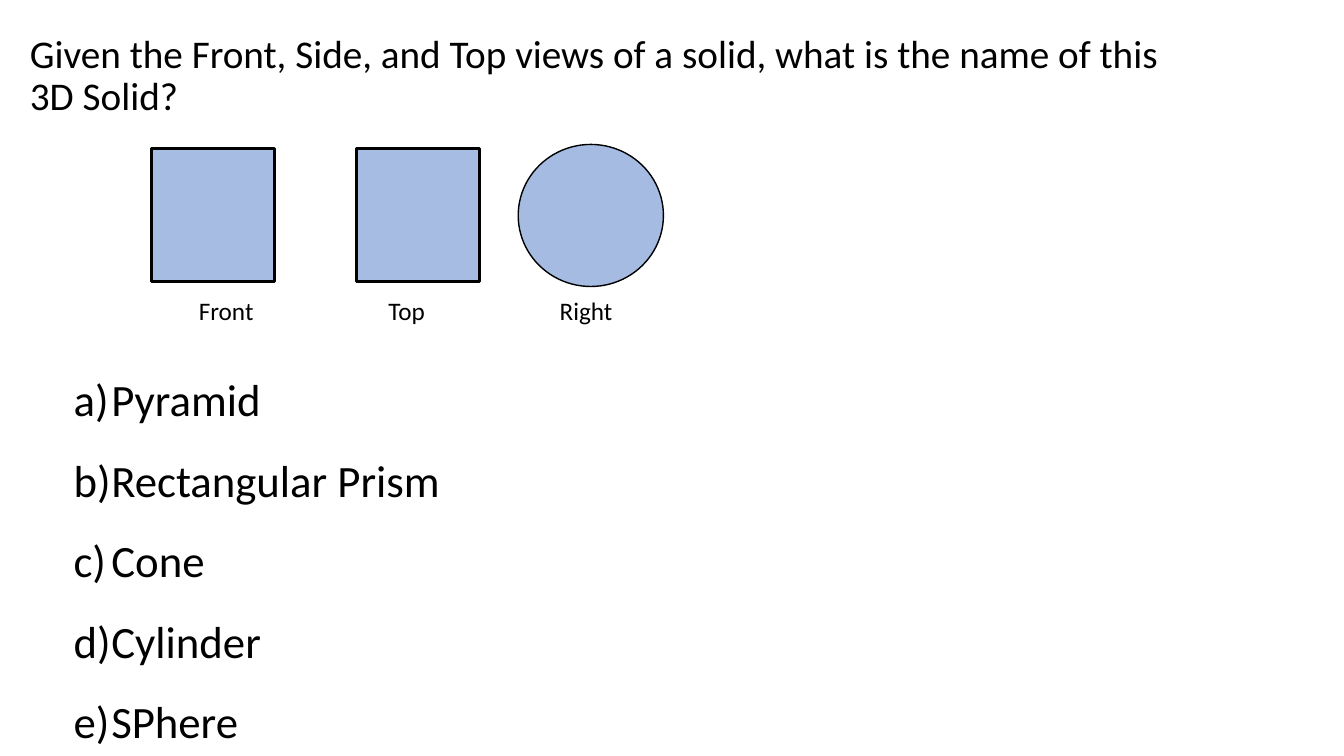
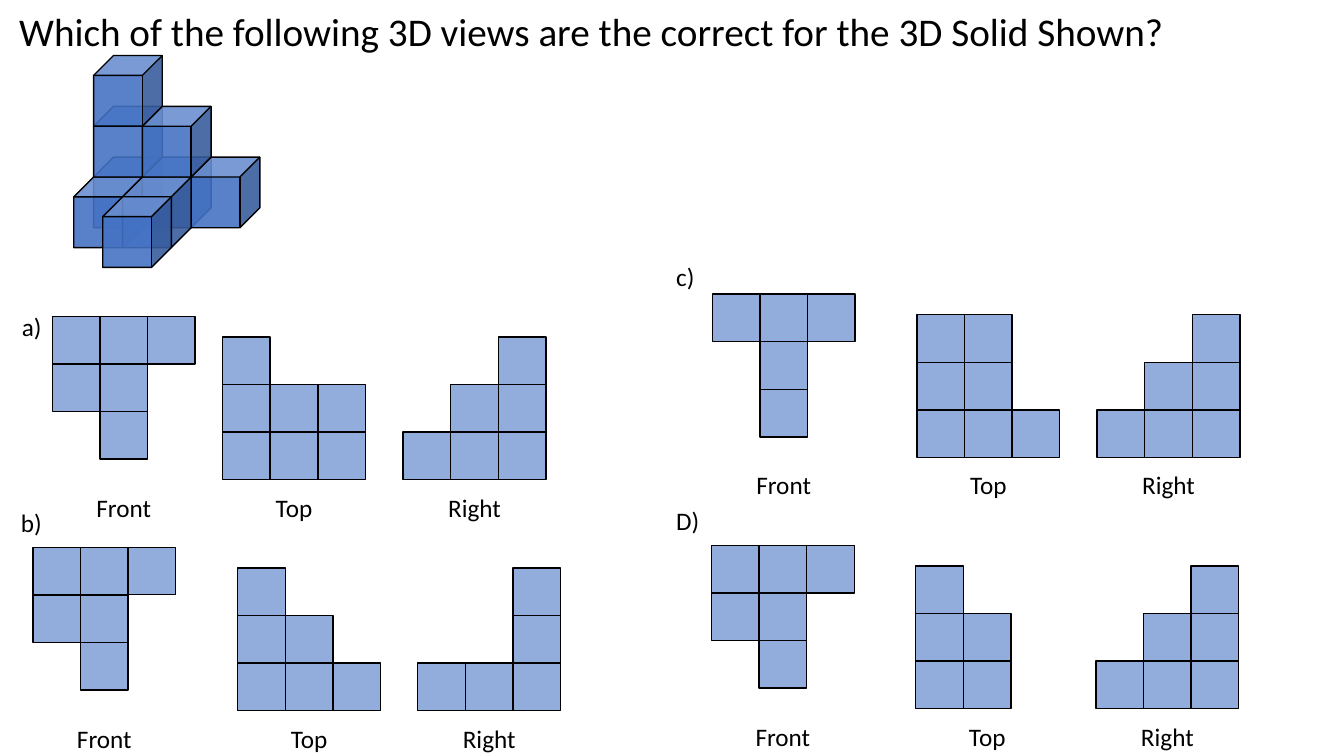
from pptx import Presentation
from pptx.dml.color import RGBColor
from pptx.enum.shapes import MSO_SHAPE as Preset
from pptx.enum.text import MSO_ANCHOR as Anchor, MSO_AUTO_SIZE as AutoSize, PP_ALIGN as Align
from pptx.oxml.ns import qn
from pptx.util import Cm, Pt
from lxml.etree import SubElement

COLORS = {"blue": "4472C4", "black": "000000"}
FONT = "Calibri"
CELL = 1.2
LABEL_WIDTH = 2.4
TITLE_ONLY, TITLE_AND_CONTENT = 5, 1

FRONT = ("XXX", "XX.", ".X.")
STAIRS = ("..X", ".XX", "XXX")
CHOICES = [
    ("a)", (0.3, 7.72), 7.97, [
        ("Front", 1.32, FRONT),
        ("Top", 5.61, ("X..", "XXX", "XXX")),
        ("Right", 10.16, STAIRS)]),
    ("b)", (0.28, 12.67), 13.79, [
        ("Front", 0.83, FRONT),
        ("Top", 5.99, ("X..", "XX.", "XXX")),
        ("Right", 10.53, ("..X", "..X", "XXX"))]),
    ("c)", (16.79, 6.45), 7.41, [
        ("Front", 17.95, ("XXX", ".X.", ".X.")),
        ("Top", 23.11, ("XX.", "XX.", "XXX")),
        ("Right", 27.65, STAIRS)]),
    ("D)", (16.79, 12.62), 13.74, [
        ("Front", 17.93, FRONT),
        ("Top", 23.08, ("X..", "XX.", "XX.")),
        ("Right", 27.62, STAIRS)]),
]
CUBES = [(0, 0, 0), (0, 0, 1), (1, 0, 0), (1, 0, 1), (0, 1, 0),
         (2, 0, 0), (1, 0, 2), (1, 1, 0), (0, 2, 0)]


def place(shape, left, top, width, height):
    """Move and size a shape, in centimetres."""
    shape.left, shape.top = Cm(left), Cm(top)
    shape.width, shape.height = Cm(width), Cm(height)


def style_paragraph(paragraph, size, align=Align.LEFT):
    """Set the font and alignment of a paragraph."""
    paragraph.alignment = align
    paragraph.font.name = FONT
    paragraph.font.size = Pt(size)
    paragraph.font.color.rgb = RGBColor.from_string(COLORS["black"])


def add_slide(presentation, layout, question, box):
    """Add a slide with its question in the title placeholder."""
    slide = presentation.slides.add_slide(presentation.slide_layouts[layout])
    title = slide.shapes.title
    place(title, *box)
    frame = title.text_frame
    frame.text = question
    frame.vertical_anchor = Anchor.TOP
    frame.auto_size = AutoSize.NONE
    paragraph = frame.paragraphs[0]
    paragraph.line_spacing = 0.9
    paragraph.space_before = Pt(10)
    style_paragraph(paragraph, 28)
    return slide


def add_solid(slide, preset, box, opacity, line_width=1):
    """Add a translucent blue shape with a black outline."""
    shape = slide.shapes.add_shape(preset, *map(Cm, box))
    shape.shadow.inherit = False
    shape.fill.solid()
    shape.fill.fore_color.rgb = RGBColor.from_string(COLORS["blue"])
    color = shape.element.spPr.find(qn("a:solidFill")).find(qn("a:srgbClr"))
    SubElement(color, qn("a:alpha"), val=str(opacity * 1000))
    shape.line.color.rgb = RGBColor.from_string(COLORS["black"])
    shape.line.width = Pt(line_width)
    return shape


def add_label(slide, text, left, top, width=LABEL_WIDTH, align=Align.CENTER):
    """Add a one-line label."""
    frame = slide.shapes.add_textbox(Cm(left), Cm(top), Cm(width), Cm(1.02)).text_frame
    frame.word_wrap = True
    frame.text = text
    style_paragraph(frame.paragraphs[0], 18, align)


def fill_answers(slide, answers, box):
    """Write the lettered answers in the body placeholder."""
    body = slide.placeholders[1]
    place(body, *box)
    frame = body.text_frame
    frame.text = "\n".join(answers)
    frame.auto_size = AutoSize.NONE
    for paragraph in frame.paragraphs:
        paragraph.line_spacing = 1.5
        paragraph.space_before = Pt(0)
        properties = paragraph._p.get_or_add_pPr()
        properties.set("marL", str(Cm(0.95)))
        properties.set("indent", str(-Cm(0.95)))
        SubElement(properties, qn("a:buFont"), typeface=FONT)
        SubElement(properties, qn("a:buAutoNum"), type="alphaLcParenR")
        style_paragraph(paragraph, 32)


def add_view(slide, left, top, rows):
    """Draw a view as a grid of squares, one for each X."""
    for row, cells in enumerate(rows):
        for column, cell in enumerate(cells):
            if cell == "X":
                box = (left + column * CELL, top + row * CELL, CELL, CELL)
                add_solid(slide, Preset.RECTANGLE, box, 58)


def add_choice(slide, letter, letter_at, top, views):
    """Draw one lettered choice with its three labelled views."""
    add_label(slide, letter, *letter_at, width=1.73, align=Align.LEFT)
    for name, left, rows in views:
        add_view(slide, left, top if name == "Front" else top + 0.52, rows)
        add_label(slide, name, left + (3 * CELL - LABEL_WIDTH) / 2, top + 4.3)


def add_cubes(slide):
    """Stack the cubes, placed by column, level and step forward."""
    for column, level, forward in CUBES:
        left = 2.36 + 1.23 * column - 0.5 * forward
        top = 3.96 - 1.28 * level + 0.5 * forward
        cube = add_solid(slide, Preset.CUBE, (left, top, 1.73, 1.78), 89)
        cube.adjustments[0] = 0.29


def build_name_slide(presentation):
    """Build the question on naming a solid."""
    slide = add_slide(
        presentation, TITLE_AND_CONTENT,
        "Given the Front, Side, and Top views of a solid, what is the name of this 3D Solid?",
        (0.5, 0.74, 29.41, 3.58))
    for left in (3.82, 8.98):
        add_solid(slide, Preset.RECTANGLE, (left, 3.74, 3.1, 3.36), 47, 2)
    add_solid(slide, Preset.OVAL, (13.06, 3.64, 3.66, 3.58), 48)
    for name, left in (("Front", 4.5), ("Top", 9.05), ("Right", 13.57)):
        add_label(slide, name, left, 7.32)
    fill_answers(slide, ["Pyramid", "Rectangular Prism", "Cone", "Cylinder", "SPhere"],
                 (1.6, 8.56, 13.82, 10.31))


def build_views_slide(presentation):
    """Build the question on matching views to a solid."""
    slide = add_slide(
        presentation, TITLE_ONLY,
        "Which of the following 3D views are the correct for the 3D Solid Shown?",
        (0.23, 0.18, 31.72, 2.77))
    add_cubes(slide)
    for choice in CHOICES:
        add_choice(slide, *choice)


def main():
    """Build and save the presentation."""
    presentation = Presentation()
    presentation.slide_width, presentation.slide_height = Cm(33.87), Cm(19.05)
    build_name_slide(presentation)
    build_views_slide(presentation)
    presentation.save("out.pptx")


if __name__ == "__main__":
    main()
